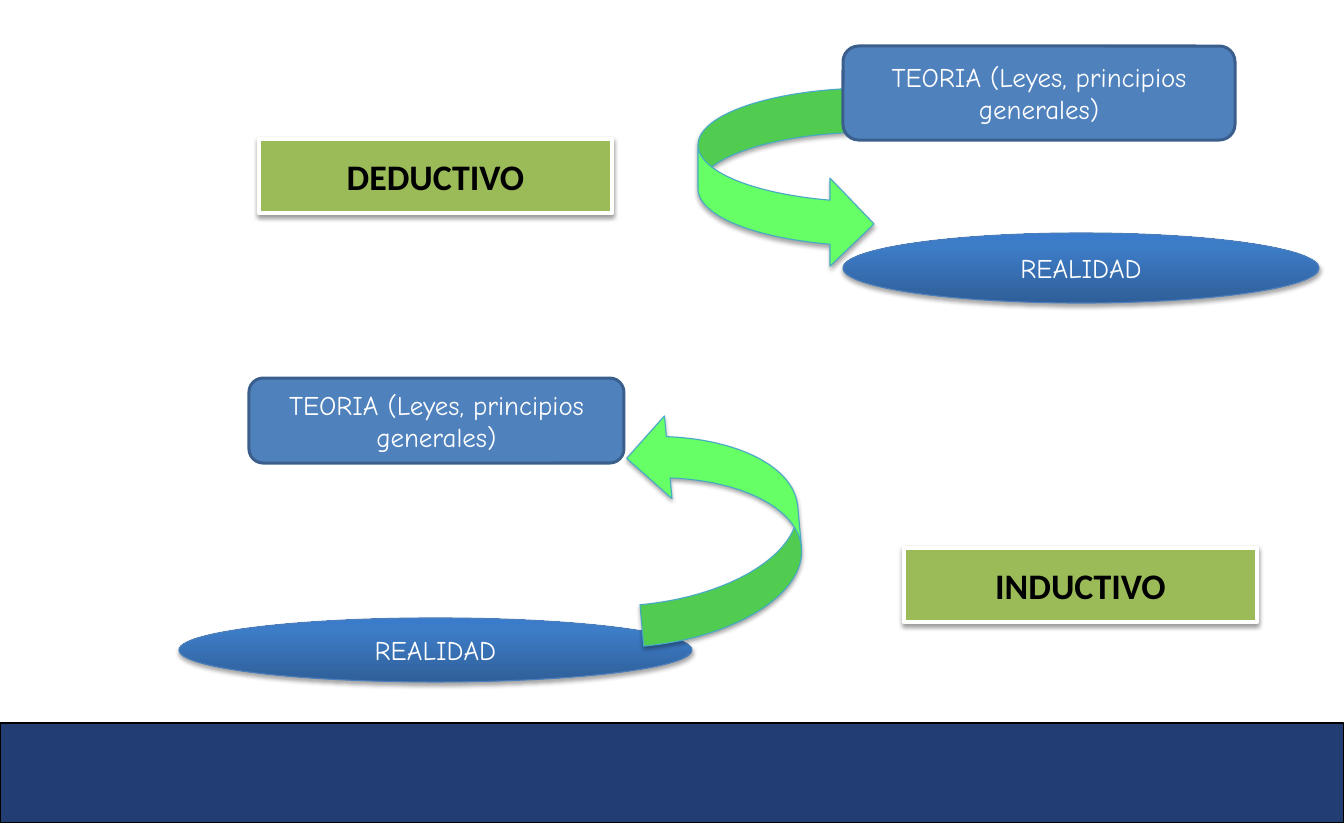
from copy import deepcopy

from lxml import etree
from pptx import Presentation
from pptx.dml.color import RGBColor
from pptx.enum.shapes import MSO_SHAPE
from pptx.enum.text import MSO_ANCHOR, PP_ALIGN
from pptx.oxml.ns import qn
from pptx.util import Emu, Pt

RECTANGLE = MSO_SHAPE.RECTANGLE
ROUNDED = MSO_SHAPE.ROUNDED_RECTANGLE
OVAL = MSO_SHAPE.OVAL
CURVED_ARROW = MSO_SHAPE.CURVED_RIGHT_ARROW
MIDDLE = MSO_ANCHOR.MIDDLE
CENTER = PP_ALIGN.CENTER

EMU_PER_PX = 8490
SLIDE_SIZE = (1344, 823)

THEORY = "TEORIA (Leyes, principios generales)"
REALITY = "REALIDAD"

# Gradient stops: position in percent, colour
BLUE_GRADIENT = [(0, "2F5F99"), (80, "3D7CC7"), (100, "3A7CCB")]

# Shadow: opacity in percent, distance in points
STYLES = {
    "footer": dict(kind=RECTANGLE, fill="223D71", line=("000000", 0.75)),
    "reality": dict(kind=OVAL, fill=BLUE_GRADIENT, line=("4B7EBC", 0.75),
                    shadow=(35, 1.8), font=("Comic Neue", 18, "FFFFFF", False)),
    "theory": dict(kind=ROUNDED, fill="4F81BD", line=("3A5F8C", 2),
                   font=("Comic Neue", 18, "FFFFFF", False)),
    "arrow": dict(kind=CURVED_ARROW, fill="66FF66", line=("46AAC5", 0.75),
                  shadow=(35, 1.8)),
    "method": dict(kind=RECTANGLE, fill="9BBB59", line=("FFFFFF", 3),
                   shadow=(38, 1.6), font=("Calibri", 24, "000000", True)),
}

# Style, (left, top, width, height) in px, text, rotation; back to front
SHAPES = [
    ("footer", (0, 723, 1344, 100), "", 0),
    ("reality", (179, 618, 513, 64), REALITY, 0),
    ("arrow", (633, 409, 166, 230), "", 174.8),
    ("theory", (249, 378, 375, 85), THEORY, 0),
    ("reality", (843, 233, 476, 70), REALITY, 0),
    ("arrow", (698, 88, 176, 180), "", 0),
    ("theory", (843, 46, 392, 94), THEORY, 0),
    ("method", (259, 139, 353, 74), "DEDUCTIVO", 0),
    ("method", (904, 548, 353, 74), "INDUCTIVO", 0),
]


def px(length):
    return Emu(length * EMU_PER_PX)


def color(hex_code):
    return RGBColor.from_string(hex_code)


def fill_shape(shape, paint):
    """Fill with one colour, or with a gradient that runs from bottom to top."""
    if isinstance(paint, str):
        shape.fill.solid()
        shape.fill.fore_color.rgb = color(paint)
        return
    shape.fill.gradient()
    shape.fill.gradient_angle = 90
    stop_list = shape._element.spPr.find(".//" + qn("a:gsLst"))
    while len(stop_list) < len(paint):
        stop_list.append(deepcopy(stop_list[0]))
    for stop, (percent, hex_code) in zip(shape.fill.gradient_stops, paint):
        stop.position = percent / 100
        stop.color.rgb = color(hex_code)


def add_shadow(shape, opacity, distance):
    effects = shape._element.spPr.find(qn("a:effectLst"))
    shadow = etree.SubElement(effects, qn("a:outerShdw"), blurRad=str(Pt(3.1)),
                              dist=str(Pt(distance)), dir="5400000", rotWithShape="0")
    tint = etree.SubElement(shadow, qn("a:srgbClr"), val="000000")
    etree.SubElement(tint, qn("a:alpha"), val=str(opacity * 1000))


def write_text(shape, text, font):
    name, size, hex_code, bold = font
    frame = shape.text_frame
    frame.word_wrap = True
    frame.vertical_anchor = MIDDLE
    para = frame.paragraphs[0]
    para.alignment = CENTER
    span = para.add_run()
    span.text = text
    span.font.name = name
    span.font.size = Pt(size)
    span.font.bold = bold
    span.font.color.rgb = color(hex_code)


def add_styled_shape(page, style, place, text, rotation):
    shape = page.shapes.add_shape(style["kind"], *map(px, place))
    shape.rotation = rotation
    shape.shadow.inherit = False
    fill_shape(shape, style["fill"])
    line_color, line_width = style["line"]
    shape.line.color.rgb = color(line_color)
    shape.line.width = Pt(line_width)
    if "shadow" in style:
        add_shadow(shape, *style["shadow"])
    if text:
        write_text(shape, text, style["font"])


def main():
    deck = Presentation()
    deck.slide_width, deck.slide_height = map(px, SLIDE_SIZE)
    page = deck.slides.add_slide(deck.slide_layouts[6])
    for style_name, place, text, rotation in SHAPES:
        add_styled_shape(page, STYLES[style_name], place, text, rotation)
    deck.save("out.pptx")


if __name__ == "__main__":
    main()
